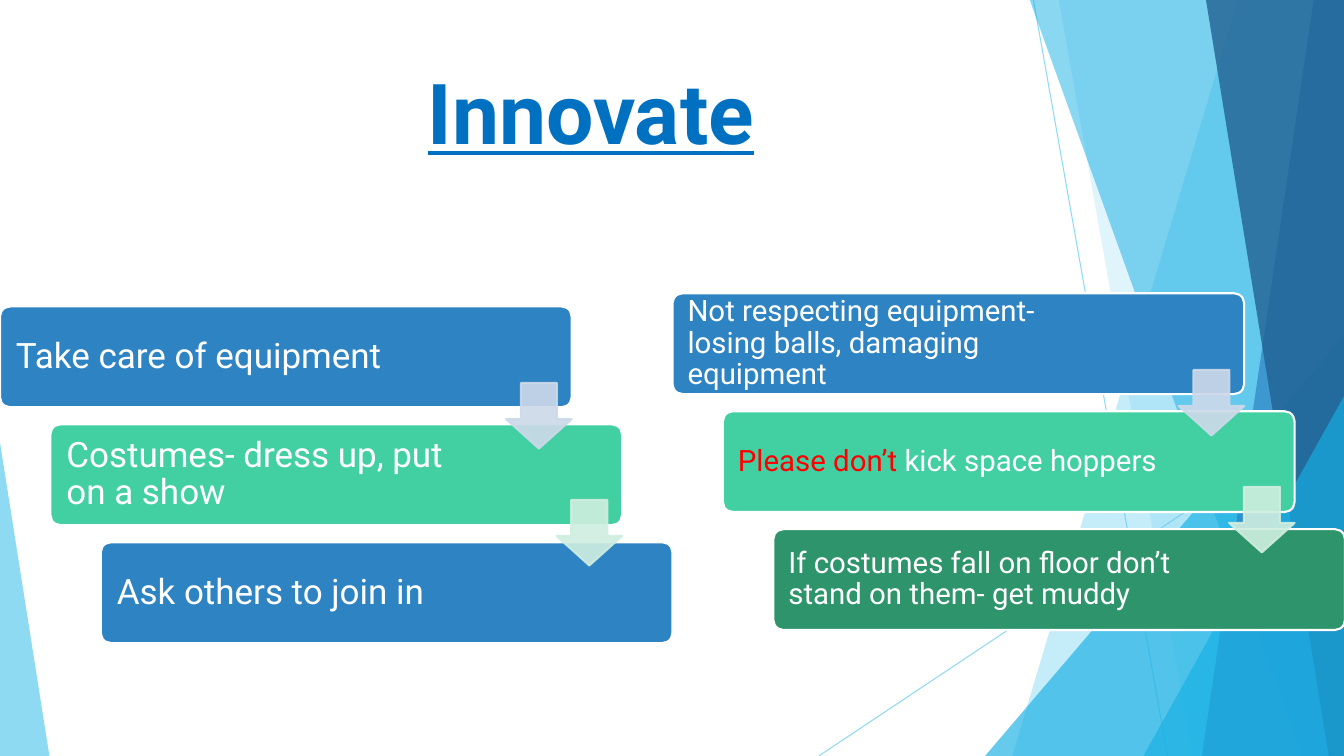
from pptx import Presentation
from pptx.dml.color import RGBColor
from pptx.enum.shapes import MSO_CONNECTOR, MSO_SHAPE
from pptx.enum.text import MSO_ANCHOR, MSO_AUTO_SIZE, PP_ALIGN
from pptx.oxml.ns import qn
from pptx.util import Inches, Pt
from lxml import etree

CARD = MSO_SHAPE.ROUNDED_RECTANGLE
ARROW = MSO_SHAPE.DOWN_ARROW
WEDGE = MSO_SHAPE.ISOSCELES_TRIANGLE
STRAIGHT = MSO_CONNECTOR.STRAIGHT
MIDDLE = MSO_ANCHOR.MIDDLE
FONT = "Roboto"
COLORS = {
    "sky": "5FCBEF", "cyan": "17B0E4", "blue": "2E83C3", "navy": "226292",
    "title": "0070C0", "mint": "42D0A2", "green": "2E946B", "white": "FFFFFF",
    "red": "FF0000", "mist": "CDD9E9", "pale": "CFEEE0",
}


def color(name):
    return RGBColor.from_string(COLORS[name])


def paint(shape, fill, line=None, alpha=100):
    shape.shadow.inherit = False
    shape.fill.solid()
    shape.fill.fore_color.rgb = color(fill)
    if line:
        shape.line.color.rgb = color(line)
        shape.line.width = Pt(1.5)
    else:
        shape.line.fill.background()
    if alpha < 100:
        for tint in shape._element.spPr.iter(qn("a:srgbClr")):
            etree.SubElement(tint, qn("a:alpha")).set("val", str(alpha * 1000))


deck = Presentation()
deck.slide_width = Inches(13.33)
deck.slide_height = Inches(7.5)
slide = deck.slides.add_slide(deck.slide_layouts[5])
shapes = slide.shapes

for x1, y1, x2, y2 in [(10.25, 0, 11.58, 7.5), (13.33, 4.03, 8.12, 7.5)]:
    ray = shapes.add_connector(STRAIGHT, Inches(x1), Inches(y1), Inches(x2), Inches(y2))
    ray.line.color.rgb = color("sky")
    ray.line.width = Pt(0.75)
    tint = next(ray._element.spPr.iter(qn("a:srgbClr")))
    etree.SubElement(tint, qn("a:alpha")).set("val", "70000")
    etree.SubElement(ray._element.spPr, qn("a:effectLst"))

facets = [
    ("band", (12.28, 10.04), "sky", 36),
    ("band", (10.5, 11.83), "sky", 20),
    ("wedge", (9.77, 3.33, 3.56, 4.17, 1), "cyan", 66),
    ("band", (10.21, 12.91), "cyan", 50),
    ("band", (13.03, 11.92), "blue", 70),
    ("band", (11.96, 13.18), "navy", 80),
    ("wedge", (11.34, 3.93, 1.99, 3.57, 1), "cyan", 66),
    ("wedge", (0, 4.39, 0.49, 3.11, 0), "sky", 70),
]
for kind, place, fill, alpha in facets:
    if kind == "band":
        top, base = place
        pen = shapes.build_freeform(Inches(top), Inches(-0.01))
        pen.add_line_segments(
            [(Inches(x), Inches(y)) for x, y in [(13.33, -0.01), (13.33, 7.5), (base, 7.5)]],
            close=True)
        facet = pen.convert_to_shape()
    else:
        facet = shapes.add_shape(WEDGE, *[Inches(n) for n in place[:4]])
        facet.adjustments[0] = place[4]
    paint(facet, fill, alpha=alpha)

title = shapes.title
title.left, title.top = Inches(4.05), Inches(0.55)
title.width, title.height = Inches(3.62), Inches(1.11)
frame = title.text_frame
frame.text = "Innovate"
frame.word_wrap = False
frame.auto_size = MSO_AUTO_SIZE.SHAPE_TO_FIT_TEXT
frame.vertical_anchor = MSO_ANCHOR.TOP
frame.paragraphs[0].alignment = PP_ALIGN.CENTER
font = frame.paragraphs[0].runs[0].font
font.name, font.size = FONT, Pt(60)
font.bold = font.underline = True
font.color.rgb = color("title")

flows = [
    (6.67, 2.91, 21, 0.12, 1.2, [
        ("blue", [("Not respecting equipment- losing balls, damaging equipment", "white")]),
        ("mint", [("Please don’t ", "red"), ("kick space hoppers", "white")]),
        ("green", [("If costumes fall on floor don’t stand on them- get muddy", "white")]),
    ]),
    (0, 3.04, 25, 0.13, 1.5, [
        ("blue", [("Take care of equipment", "white")]),
        ("mint", [("Costumes- dress up, put on a show", "white")]),
        ("blue", [("Ask others to join in", "white")]),
    ]),
]
for left, top, size, inset, gap, steps in flows:
    for row, (fill, parts) in enumerate(steps):
        card = shapes.add_shape(CARD, Inches(left + 0.5 * row), Inches(top + 1.17 * row),
                                Inches(5.67), Inches(1))
        card.adjustments[0] = 0.1
        paint(card, fill, "white")
        frame = card.text_frame
        frame.word_wrap = True
        frame.vertical_anchor = MIDDLE
        frame.margin_left, frame.margin_right = Inches(inset), Inches(gap)
        para = frame.paragraphs[0]
        para.alignment = PP_ALIGN.LEFT
        para.line_spacing = 0.9
        for text, ink in parts:
            run = para.add_run()
            run.text = text
            run.font.name, run.font.size = FONT, Pt(size)
            run.font.color.rgb = color(ink)
    for row, fill in enumerate(["mist", "pale"]):
        arrow = shapes.add_shape(ARROW, Inches(left + 5.02 + 0.5 * row),
                                 Inches(top + 0.76 + 1.16 * row), Inches(0.65), Inches(0.65))
        arrow.adjustments[0] = 0.55
        arrow.adjustments[1] = 0.45
        paint(arrow, fill, fill, 90)

deck.save("out.pptx")
